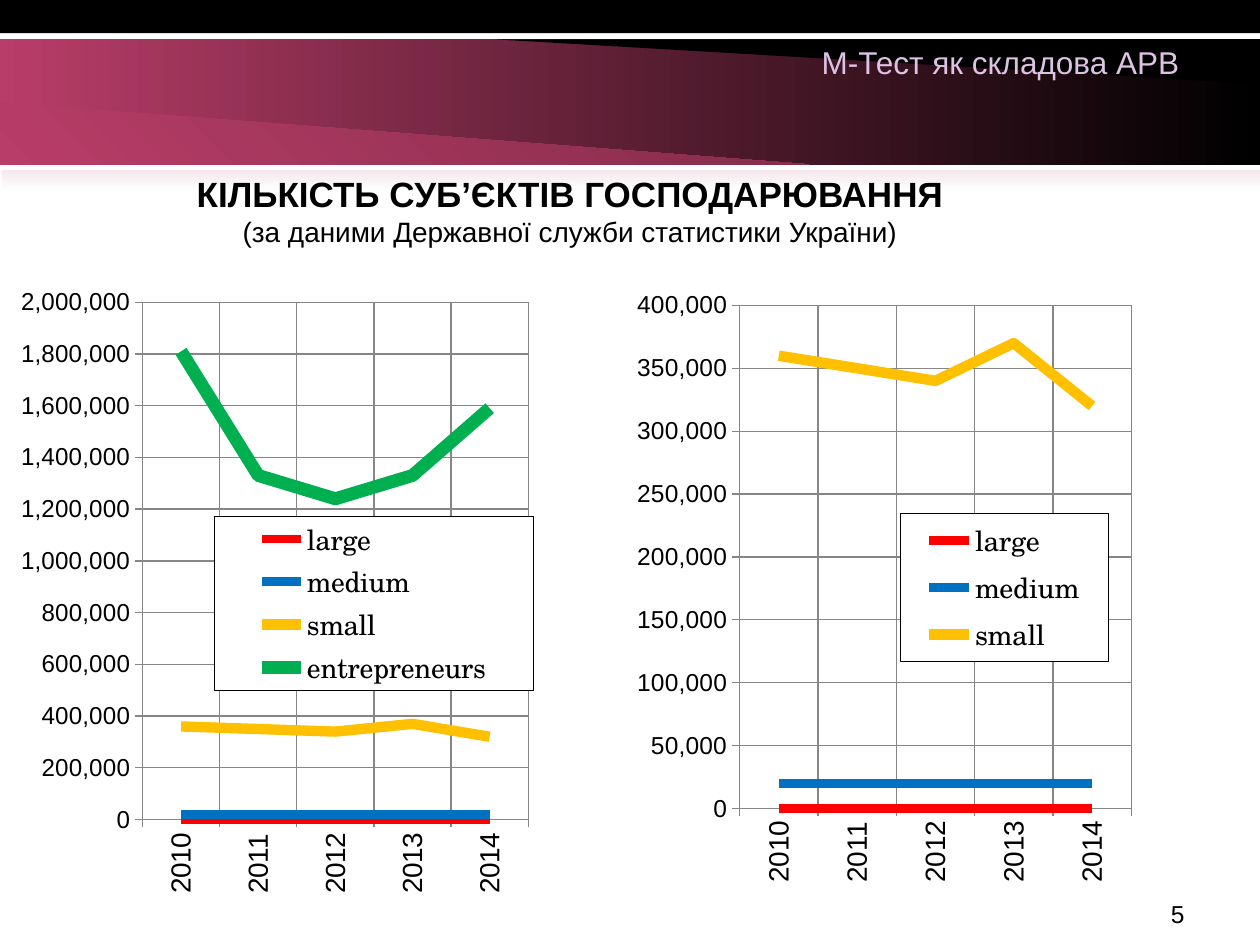
from lxml import etree
from pptx import Presentation
from pptx.chart.data import CategoryChartData
from pptx.dml.color import RGBColor
from pptx.enum.chart import XL_CHART_TYPE as ChartType, XL_LEGEND_POSITION as LegendPosition
from pptx.enum.chart import XL_TICK_MARK as TickMark
from pptx.enum.shapes import MSO_SHAPE as Preset
from pptx.enum.text import MSO_AUTO_SIZE as AutoSize, PP_ALIGN as Align
from pptx.oxml import parse_xml
from pptx.oxml.ns import nsdecls, qn
from pptx.util import Pt

YEARS = ["2010", "2011", "2012", "2013", "2014"]
SERIES = [
    ("large", [0] * 5, "FF0000", 5),
    ("medium", [20000] * 5, "0070C0", 5),
    ("small", [360000, 350000, 340000, 370000, 320000], "FFC000", 6),
    ("entrepreneurs", [1810000, 1330000, 1240000, 1330000, 1590000], "00B050", 7.5),
]


def color(value):
    return RGBColor.from_string(value)


def set_layout(parent, index, box, inner=False):
    for old in parent.findall(qn("c:layout")):
        parent.remove(old)
    layout = parse_xml(f"<c:layout {nsdecls('c')}><c:manualLayout/></c:layout>")
    values = {"layoutTarget": "inner"} if inner else {}
    values.update(xMode="edge", yMode="edge", **dict(zip("xywh", box)))
    for name, value in values.items():
        etree.SubElement(layout[0], qn(f"c:{name}")).set("val", str(value))
    parent.insert(index, layout)


class SlideBuilder:
    """Holds the style and the current slide, and adds each kind of element."""

    font = "Arial"
    legend_font = "TeX Gyre Schola"
    ink = "000000"
    grid = "868686"

    def __init__(self, slide):
        self.slide = slide

    def set_font(self, font, **values):
        font.color.rgb = color(values.pop("ink", self.ink))
        for name, value in {"name": self.font, **values}.items():
            setattr(font, name, value)

    def paint(self, shape, colors, angle=0):
        shape.shadow.inherit = False
        shape.line.fill.background()
        if len(colors) == 1:
            shape.fill.solid()
            shape.fill.fore_color.rgb = color(colors[0])
            return
        shape.fill.gradient()
        shape.fill.gradient_angle = angle
        for stop, value in zip(shape.fill.gradient_stops, colors):
            stop.color.rgb = color(value)

    def rectangle(self, box, *colors, angle=0):
        shape = self.slide.shapes.add_shape(Preset.RECTANGLE, *map(Pt, box))
        self.paint(shape, colors, angle)

    def polygon(self, points, *colors, angle=0):
        start, *others = [(Pt(x), Pt(y)) for x, y in points]
        builder = self.slide.shapes.build_freeform(*start)
        builder.add_line_segments(others)
        self.paint(builder.convert_to_shape(), colors, angle)

    def text(self, box, lines, align, wrap=True, grow=True):
        frame = self.slide.shapes.add_textbox(*map(Pt, box)).text_frame
        frame.word_wrap = wrap
        frame.auto_size = AutoSize.SHAPE_TO_FIT_TEXT if grow else AutoSize.NONE
        for index, (words, style) in enumerate(lines):
            paragraph = frame.add_paragraph() if index else frame.paragraphs[0]
            paragraph.alignment = align
            run = paragraph.add_run()
            run.text = words
            self.set_font(run.font, **style)

    def axis(self, axis, size):
        axis.has_major_gridlines = True
        axis.major_tick_mark = TickMark.CROSS
        axis.minor_tick_mark = TickMark.NONE
        for line in (axis.format.line, axis.major_gridlines.format.line):
            line.color.rgb = color(self.grid)
            line.width = Pt(0.75)
        self.set_font(axis.tick_labels.font, size=Pt(size))

    def legend(self, chart, box):
        chart.has_legend = True
        legend = chart.legend
        legend.position = LegendPosition.RIGHT
        legend.include_in_layout = False
        self.set_font(legend.font, name=self.legend_font, size=Pt(16))
        element = legend._element
        set_layout(element, 1, box)
        element.find(qn("c:txPr")).addprevious(parse_xml(
            f"<c:spPr {nsdecls('c', 'a')}>"
            '<a:solidFill><a:srgbClr val="FFFFFF"/></a:solidFill>'
            f'<a:ln w="{Pt(0.5)}"><a:solidFill><a:srgbClr val="{self.ink}"/></a:solidFill></a:ln>'
            "</c:spPr>"))

    def line_chart(self, box, series, maximum, unit, plot_box, legend_box):
        data = CategoryChartData(number_format="#,##0")
        data.categories = YEARS
        for name, values, *_ in series:
            data.add_series(name, values)
        frame = self.slide.shapes.add_chart(ChartType.LINE, *map(Pt, box), data)
        chart = frame.chart
        chart.has_title = False
        self.set_font(chart.font, size=Pt(16))
        self.axis(chart.category_axis, 16)
        self.axis(chart.value_axis, 14)
        chart.category_axis._element.find(qn("c:txPr")).find(qn("a:bodyPr")).set("rot", "-5400000")
        scale = {"minimum_scale": 0, "maximum_scale": maximum, "major_unit": unit}
        for name, value in scale.items():
            setattr(chart.value_axis, name, value)
        labels = chart.value_axis.tick_labels
        labels.number_format = "#,##0"
        labels.number_format_is_linked = False
        plot = chart.plots[0]
        plot.vary_by_categories = False
        for line, (_, _, value, width) in zip(plot.series, series):
            line.smooth = False
            line.format.line.color.rgb = color(value)
            line.format.line.width = Pt(width)
        self.legend(chart, legend_box)
        set_layout(chart._chartSpace.chart.plotArea, 0, plot_box, inner=True)


def main():
    presentation = Presentation()
    presentation.slide_width, presentation.slide_height = Pt(720), Pt(540)
    builder = SlideBuilder(presentation.slides.add_slide(presentation.slide_layouts[6]))

    builder.rectangle((0, 22.5, 720.5, 72), "B83D68", "000000")
    builder.polygon([(707, 22.5), (283, 22.5), (720.5, 48), (720.5, 22.5)], "000000")
    builder.polygon([(13.5, 94), (463, 94), (0, 58.5), (0, 94)], "B83D68", "842C4A", angle=45)
    builder.rectangle((0, 0, 720, 19), "000000")
    builder.rectangle((1, 97, 719, 12.5), "F4E7ED", "FFFFFF", angle=270)

    builder.text((516, 510, 168, 19.5), [("5", {"size": Pt(14)})], Align.RIGHT, grow=False)
    builder.text((462.5, 21, 221, 29),
                 [("М-Тест як складова АРВ", {"size": Pt(18), "ink": "DEC2E4"})],
                 Align.LEFT, wrap=False)
    builder.line_chart((12, 150, 300, 372), SERIES, 2000000, 200000,
                       (0.22, 0.061, 0.746, 0.795), (0.36, 0.39, 0.615, 0.267))
    builder.text((-3, 95, 657.5, 51), [
        ("КІЛЬКІСТЬ СУБ’ЄКТІВ ГОСПОДАРЮВАННЯ", {"size": Pt(20), "bold": True}),
        ("(за даними Державної служби статистики України)", {"size": Pt(16), "bold": False}),
    ], Align.CENTER)
    builder.line_chart((354, 150, 300, 372), SERIES[:3], 400000, 50000,
                       (0.229, 0.066, 0.746, 0.773), (0.535, 0.386, 0.396, 0.227))
    presentation.save("out.pptx")


if __name__ == "__main__":
    main()
